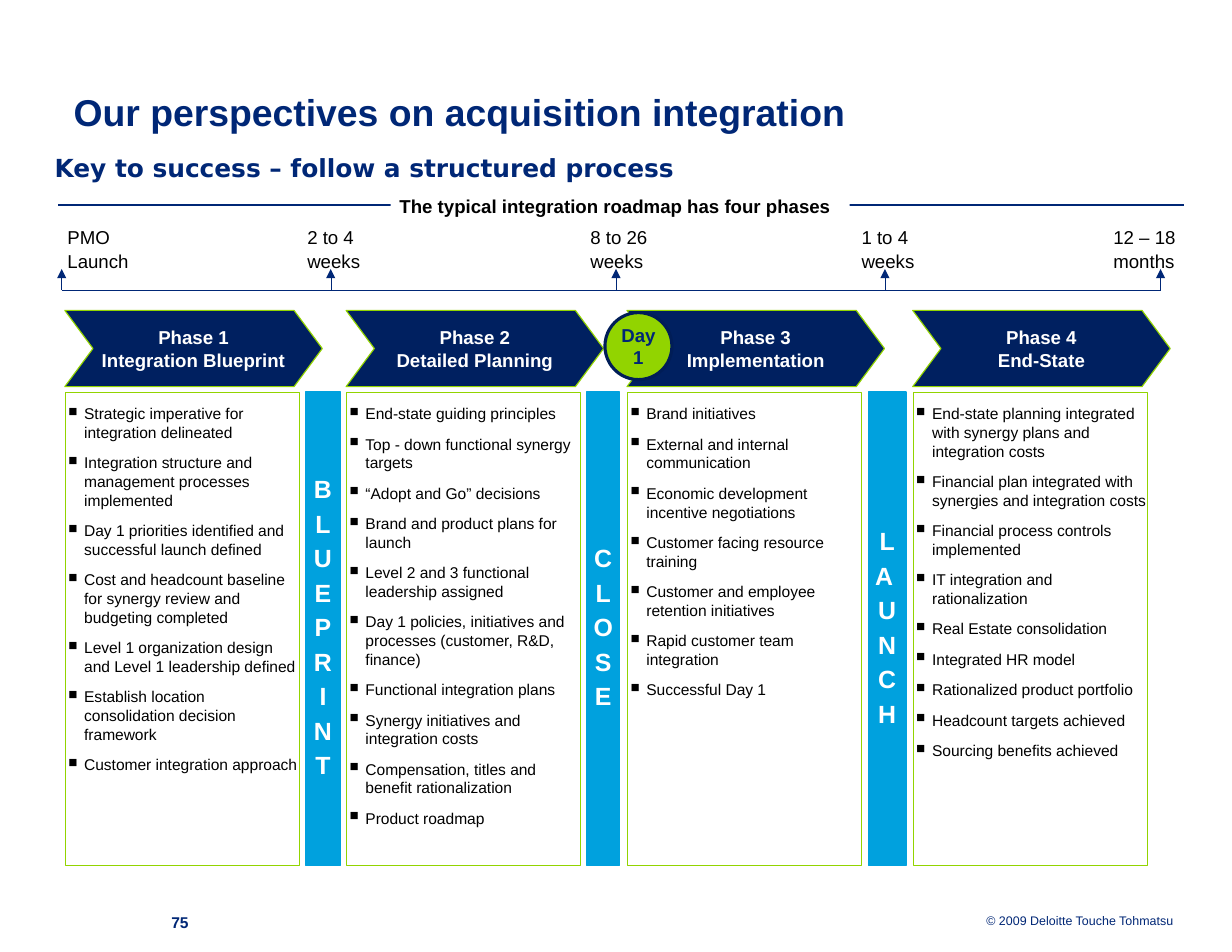
import pptx
import pptx.dml.color
import pptx.enum.shapes
import pptx.enum.text
import pptx.oxml.ns
import pptx.util
from lxml import etree

Cm = pptx.util.Cm
Pt = pptx.util.Pt
RGBColor = pptx.dml.color.RGBColor
SHAPE = pptx.enum.shapes.MSO_SHAPE
ALIGN = pptx.enum.text.PP_ALIGN
ANCHOR = pptx.enum.text.MSO_ANCHOR
qn = pptx.oxml.ns.qn

BLUE = RGBColor(0x00, 0x27, 0x76)
NAVY = RGBColor(0x00, 0x20, 0x60)
RING = RGBColor(0x00, 0x1D, 0x57)
CYAN = RGBColor(0x00, 0xA1, 0xDE)
GREEN = RGBColor(0x92, 0xD4, 0x00)
BLACK = RGBColor(0x00, 0x00, 0x00)
WHITE = RGBColor(0xFF, 0xFF, 0xFF)

PHASES = [
    ("Phase 1\vIntegration Blueprint", [
        "Strategic imperative for integration delineated",
        "Integration structure and management processes implemented",
        "Day 1 priorities identified and successful launch defined",
        "Cost and headcount baseline for synergy review and budgeting completed",
        "Level 1 organization design and Level 1 leadership defined",
        "Establish location consolidation decision framework",
        "Customer integration approach"]),
    ("Phase 2\vDetailed Planning", [
        "End-state guiding principles",
        "Top - down functional synergy targets",
        "“Adopt and Go” decisions",
        "Brand and product plans for launch",
        "Level 2 and 3 functional leadership assigned",
        "Day 1 policies, initiatives and processes (customer, R&D, finance)",
        "Functional integration plans",
        "Synergy initiatives and integration costs",
        "Compensation, titles and benefit rationalization",
        "Product roadmap"]),
    ("Phase 3\vImplementation", [
        "Brand initiatives",
        "External and internal communication",
        "Economic development incentive negotiations",
        "Customer facing resource training",
        "Customer and employee retention initiatives",
        "Rapid customer team integration",
        "Successful Day 1"]),
    ("Phase 4\vEnd-State", [
        "End-state planning integrated with synergy plans and integration costs",
        "Financial plan integrated with synergies and integration costs",
        "Financial process controls implemented",
        "IT integration and rationalization",
        "Real Estate consolidation",
        "Integrated HR model",
        "Rationalized product portfolio",
        "Headcount targets achieved",
        "Sourcing benefits achieved"]),
]
PHASE_LEFTS = [1.47, 7.85, 14.22, 20.7]
GATES = [(["B", "L", "U", "E", "P", "R", "I", "N", "T"], 6.93, 0.79),
         (["C", "L", "O", "S", "E"], 13.31, 0.74),
         (["L", "A ", "U", "N", "C", "H"], 19.69, 0.86)]
MILESTONES = [("PMO \vLaunch", 0, 0), ("2 to 4\vweeks", 5.44, 6.1),
              ("8 to 26\vweeks", 11.86, 12.57), ("1 to 4\vweeks", 18.01, 18.67),
              ("12 – 18\vmonths", 23.72, 24.92)]


def write(sp, text, size=12, color=BLACK, bold=False, font="Arial", align=ALIGN.LEFT,
          anchor=ANCHOR.TOP, inset=(0, 0, 0, 0), wrap=True, spacing=None, before=0,
          indent=0, bullet=None):
    tf = sp.text_frame
    tf.word_wrap = wrap
    tf.vertical_anchor = anchor
    tf.margin_left, tf.margin_top, tf.margin_right, tf.margin_bottom = map(Cm, inset)
    for i, line in enumerate([text] if isinstance(text, str) else text):
        p = tf.paragraphs[0] if i == 0 else tf.add_paragraph()
        p.text = line
        p.alignment = align
        if spacing:
            p.line_spacing = spacing
        if before and i:
            p.space_before = Pt(before)
        pPr = p._p.get_or_add_pPr()
        if indent:
            pPr.set("marL", str(Cm(indent)))
            pPr.set("indent", str(-Cm(indent)))
        if bullet:
            clr = etree.SubElement(pPr, qn("a:buClr"))
            etree.SubElement(clr, qn("a:srgbClr")).set("val", str(color))
            etree.SubElement(pPr, qn("a:buSzPct")).set("val", "80000")
            etree.SubElement(pPr, qn("a:buChar")).set("char", bullet)
        for r in p.runs:
            r.font.name = font
            r.font.size = Pt(size)
            r.font.bold = bold
            r.font.color.rgb = color


def add_text(s, box, text, **fmt):
    sp = s.shapes.add_textbox(*map(Cm, box))
    write(sp, text, **fmt)


def add_shape(s, kind, box, fill=None, line=None, width=0.75):
    sp = s.shapes.add_shape(kind, *map(Cm, box))
    sp.shadow.inherit = False
    if fill is None:
        sp.fill.background()
    else:
        sp.fill.solid()
        sp.fill.fore_color.rgb = fill
    if line is None:
        sp.line.fill.background()
    else:
        sp.line.color.rgb = line
        sp.line.width = Pt(width)
    return sp


def add_line(s, x1, y1, x2, y2, width, arrow=False):
    c = s.shapes.add_connector(pptx.enum.shapes.MSO_CONNECTOR.STRAIGHT,
                               Cm(x1), Cm(y1), Cm(x2), Cm(y2))
    c.line.color.rgb = BLUE
    c.line.width = Pt(width)
    if arrow:
        etree.SubElement(c.line._get_or_add_ln(), qn("a:headEnd")).set("type", "triangle")
    etree.SubElement(c._element.spPr, qn("a:effectLst"))


def add_heading(s, x, y, w):
    fmt = dict(color=BLUE, bold=True, anchor=ANCHOR.MIDDLE, spacing=1.05)
    add_text(s, (x + 0.43, y, w, 1.98), "Our perspectives on acquisition integration",
             size=24, **fmt)
    add_text(s, (x, y + 1.27, w, 1.98), "Key to success – follow a structured process",
             size=16, font="DejaVu Sans", **fmt)


def add_banner(s, x, y, w):
    add_line(s, x, y, x + w, y, 1)
    sp = add_shape(s, SHAPE.RECTANGLE, (x + 7.54, y - 0.23, 10.41, 0.51), WHITE)
    write(sp, "The typical integration roadmap has four phases", bold=True,
          anchor=ANCHOR.BOTTOM, inset=(0.2, 0, 0.2, 0), wrap=False, spacing=0.95)


def add_timeline(s, x, y, w, h):
    base = y + h
    for label, text_x, tick_x in MILESTONES:
        add_text(s, (x - 0.15 + text_x, y, 2.2, h), label,
                 inset=(0.28, 0.43, 0, 0.43), spacing=1.06)
        add_line(s, x + tick_x, base - 0.48, x + tick_x, base, 0.25, arrow=True)
    add_line(s, x, base, x + w, base, 0.75)


def add_phase(s, x, y, w, h, title, items):
    sp = add_shape(s, SHAPE.CHEVRON, (x, y, w, 1.73), NAVY, GREEN)
    sp.adjustments[0] = 0.37
    write(sp, title, color=WHITE, bold=True, align=ALIGN.CENTER,
          anchor=ANCHOR.MIDDLE, wrap=False)
    sp = add_shape(s, SHAPE.RECTANGLE, (x, y + 1.85, w - 0.53, h - 1.85), None, GREEN, 0.25)
    write(sp, items, size=10, inset=(0.08, 0.28, 0, 0), before=7.5, indent=0.36, bullet="■")


def add_gate(s, x, y, w, h, letters):
    sp = add_shape(s, SHAPE.RECTANGLE, (x, y, w, h), CYAN, CYAN)
    write(sp, letters, size=16, color=WHITE, bold=True, align=ALIGN.CENTER,
          anchor=ANCHOR.MIDDLE, inset=(0, 0.28, 0, 0.28), spacing=0.9, before=4.9, indent=0.56)


def add_day_one(s, x, y, size):
    sp = add_shape(s, SHAPE.OVAL, (x, y, size, size), GREEN, RING, 2)
    write(sp, "Day 1", color=BLUE, bold=True, align=ALIGN.CENTER,
          anchor=ANCHOR.MIDDLE, inset=(0.13, 0.13, 0.13, 0.13))


def add_footer(s, x, y, w):
    add_text(s, (x, y, 5.82, 0.38), "75", size=10, color=BLUE, bold=True,
             align=ALIGN.CENTER, inset=(0.28, 0.15, 0.28, 0.15), spacing=Pt(12))
    add_text(s, (x + w - 7.06, y + 0.07, 7.06, 0.46), "© 2009 Deloitte Touche Tohmatsu",
             size=8, color=BLUE, align=ALIGN.RIGHT, spacing=Pt(12))


def main():
    prs = pptx.Presentation()
    prs.slide_width, prs.slide_height = Cm(27.94), Cm(21.59)
    s = prs.slides.add_slide(prs.slide_layouts[6])
    add_footer(s, 1.17, 20.55, 25.45)
    add_timeline(s, 1.4, 4.67, 24.94, 1.91)
    for (title, items), x in zip(PHASES, PHASE_LEFTS):
        add_phase(s, x, 7.04, 5.84, 12.59, title, items)
    for letters, x, w in GATES:
        add_gate(s, x, 8.89, w, 10.74, letters)
    add_heading(s, 1.24, 1.52, 25.73)
    add_banner(s, 1.32, 4.65, 25.53)
    add_day_one(s, 13.72, 7.09, 1.52)
    prs.save("out.pptx")


if __name__ == "__main__":
    main()
